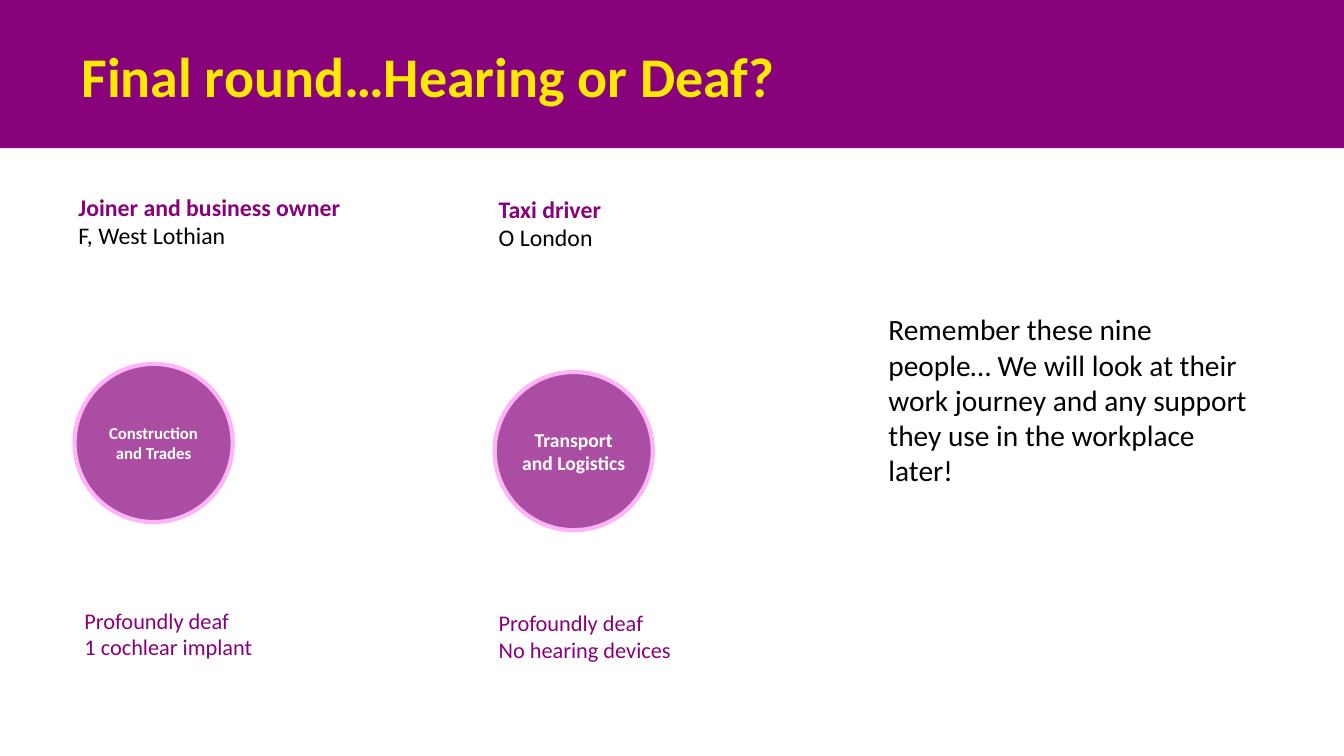
from pptx import Presentation
from pptx.dml.color import RGBColor
from pptx.enum.shapes import MSO_SHAPE
from pptx.enum.text import MSO_ANCHOR, PP_ALIGN
from pptx.util import Inches, Pt

RECTANGLE, OVAL = MSO_SHAPE.RECTANGLE, MSO_SHAPE.OVAL
MIDDLE = MSO_ANCHOR.MIDDLE
LEFT, CENTER = PP_ALIGN.LEFT, PP_ALIGN.CENTER

COLORS = {
    "purple": "87027B",
    "yellow": "FFE900",
    "circle": "AB4EA3",
    "ring": "FEB5F7",
    "white": "FFFFFF",
    "black": "000000",
}
FONT = "Calibri"
WIDE_INSETS = (0.13, 0.07)
NORMAL_INSETS = (0.1, 0.05)
CIRCLE_SIZE = 1.57

TITLE = "Final round…Hearing or Deaf?"
REMINDER = (
    "Remember these nine people… We will look at their work journey "
    "and any support they use in the workplace later!"
)
PEOPLE = [
    {
        "job": "Joiner and business owner",
        "place": "F, West Lothian",
        "heading_box": (0.68, 1.86, 4.23, 0.96),
        "sector": "Construction and Trades",
        "sector_size": 12,
        "circle_at": (0.74, 3.61),
        "hearing": ["Profoundly deaf", "1 cochlear implant"],
        "hearing_box": (0.74, 5.97, 2.71, 0.64),
        "insets": NORMAL_INSETS,
    },
    {
        "job": "Taxi driver",
        "place": "O London",
        "heading_box": (4.82, 1.86, 3.95, 0.79),
        "sector": "Transport and Logistics",
        "sector_size": 14,
        "circle_at": (4.91, 3.69),
        "hearing": ["Profoundly deaf", "No hearing devices"],
        "hearing_box": (4.82, 5.97, 2.76, 0.79),
        "insets": WIDE_INSETS,
    },
]


def color(name):
    return RGBColor.from_string(COLORS[name])


def write(shape, lines, insets, align=LEFT):
    frame = shape.text_frame
    frame.word_wrap = True
    frame.margin_left = frame.margin_right = Inches(insets[0])
    frame.margin_top = frame.margin_bottom = Inches(insets[1])
    frame.text = "\n".join(text for text, *_ in lines)
    for paragraph, (_, size, color_name, bold) in zip(frame.paragraphs, lines):
        paragraph.alignment = align
        font = paragraph.font
        font.name, font.size, font.bold = FONT, Pt(size), bold
        font.color.rgb = color(color_name)


def add_text(shapes, box, lines, insets):
    write(shapes.add_textbox(*map(Inches, box)), lines, insets)


def add_filled(shapes, kind, box, fill):
    shape = shapes.add_shape(kind, *map(Inches, box))
    shape.shadow.inherit = False
    shape.fill.solid()
    shape.fill.fore_color.rgb = color(fill)
    shape.line.fill.background()
    return shape


def add_person(slide, person):
    group = slide.shapes.add_group_shape().shapes
    heading = [(person["job"], 17, "purple", True), (person["place"], 17, "black", False)]
    add_text(group, person["heading_box"], heading, person["insets"])

    circle_box = (*person["circle_at"], CIRCLE_SIZE, CIRCLE_SIZE)
    circle = add_filled(group, OVAL, circle_box, "circle")
    circle.line.color.rgb = color("ring")
    circle.line.width = Pt(3)
    write(circle, [(person["sector"], person["sector_size"], "white", True)], (0, 0), CENTER)
    circle.text_frame.vertical_anchor = MIDDLE

    hearing = [(text, 16, "purple", False) for text in person["hearing"]]
    add_text(slide.shapes, person["hearing_box"], hearing, person["insets"])


def main():
    presentation = Presentation()
    presentation.slide_width = Inches(13.34)
    presentation.slide_height = Inches(7.5)
    slide = presentation.slides.add_slide(presentation.slide_layouts.get_by_name("Title Only"))

    title = slide.shapes.title
    band = add_filled(slide.shapes, RECTANGLE, (0, 0, 13.34, 1.47), "purple")
    title.element.addprevious(band.element)
    title.left, title.top, title.width, title.height = map(Inches, (0.68, 0.35, 9.03, 0.79))
    write(title, [(TITLE, 40, "yellow", True)], WIDE_INSETS)
    title.text_frame.vertical_anchor = MIDDLE

    for person in PEOPLE:
        add_person(slide, person)
    add_text(slide.shapes, (8.72, 3.04, 3.85, 1.87), [(REMINDER, 21, "black", False)], NORMAL_INSETS)

    presentation.save("out.pptx")


if __name__ == "__main__":
    main()
